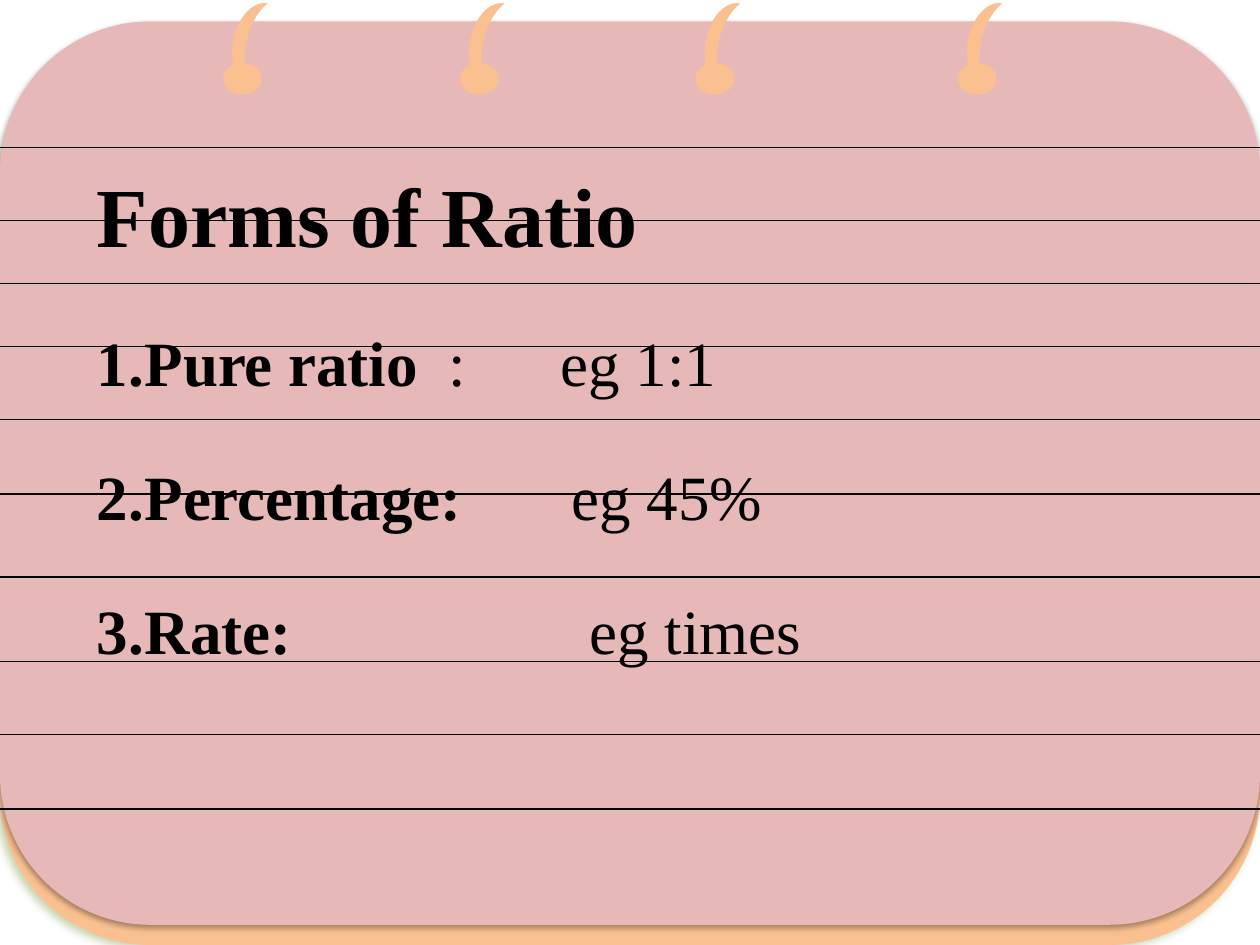
from lxml import etree
from pptx import Presentation
from pptx.dml.color import RGBColor
from pptx.enum.shapes import MSO_CONNECTOR, MSO_SHAPE
from pptx.enum.text import MSO_AUTO_SIZE, PP_ALIGN
from pptx.oxml.ns import qn
from pptx.util import Inches, Pt

COLORS = {"ring": "FAC090", "paper": "E6B9B8", "ink": "000000", "glow": "77933C"}
FONT = "Times New Roman"
RULE_TOPS = [1.17, 1.75, 2.25, 2.75, 3.33, 3.92, 4.58, 5.25, 5.83, 6.42]
RING_LEFTS = [1.77, 3.65, 5.52, 7.6]
FORMS = [
    ("Pure ratio", "\t:\teg 1:1", [2.79, 3.68]),
    ("Percentage:", "\teg 45%", [3.77]),
    ("Rate:", "\teg times", [3.91]),
]


class Notepad:
    """Draws the parts of a ruled notepad on the current slide."""

    def __init__(self, page):
        self.page = page
        self.group = page.shapes.add_group_shape()

    def color(self, name):
        return RGBColor.from_string(COLORS[name])

    def shape(self, kind, left, top, width, height, fill, rotation=0):
        shape = self.group.shapes.add_shape(
            kind, Inches(left), Inches(top), Inches(width), Inches(height))
        shape.shadow.inherit = False
        shape.fill.solid()
        shape.fill.fore_color.rgb = self.color(fill)
        shape.line.fill.background()
        shape.rotation = rotation
        return shape

    def sheet(self, top, fill, shadow, alpha, blur, distance, angle):
        sheet = self.shape(MSO_SHAPE.ROUNDED_RECTANGLE, 0, top, 10, 7.17, fill)
        effects = sheet._element.spPr.find(qn("a:effectLst"))
        outer = etree.SubElement(
            effects, qn("a:outerShdw"), blurRad=str(Pt(blur)), dist=str(Pt(distance)),
            dir=str(angle * 60000), rotWithShape="0")
        tint = etree.SubElement(outer, qn("a:srgbClr"), val=COLORS[shadow])
        etree.SubElement(tint, qn("a:alpha"), val=str(alpha * 1000))

    def ring(self, left):
        self.shape(MSO_SHAPE.MOON, left + 0.08, 0, 0.21, 0.67, "ring", 11.4)
        self.shape(MSO_SHAPE.OVAL, left, 0.5, 0.31, 0.25, "ring")

    def rule(self, top):
        rule = self.group.shapes.add_connector(
            MSO_CONNECTOR.STRAIGHT, 0, Inches(top), Inches(10), Inches(top))
        rule.line.color.rgb = self.color("ink")
        rule.line.width = Pt(0.75)
        etree.SubElement(rule._element.spPr, qn("a:effectLst"))

    def text_box(self, left, top, width, height):
        box = self.page.shapes.add_textbox(
            Inches(left), Inches(top), Inches(width), Inches(height))
        frame = box.text_frame
        frame.word_wrap = True
        frame.auto_size = MSO_AUTO_SIZE.NONE
        return frame

    def style(self, para, size):
        para.alignment = PP_ALIGN.JUSTIFY
        para.font.name = FONT
        para.font.size = Pt(size)
        para.font.color.rgb = self.color("ink")

    def title(self, frame, text):
        para = frame.paragraphs[0]
        para.text = text
        self.style(para, 48)
        para.font.bold = True

    def item(self, frame, name, example, stops):
        para = frame.add_paragraph()
        props = para._p.get_or_add_pPr()
        props.set("marL", str(Inches(0.38)))
        props.set("indent", str(-Inches(0.38)))
        etree.SubElement(props, qn("a:buFont"), typeface=FONT)
        etree.SubElement(props, qn("a:buAutoNum"), type="arabicPeriod")
        tabs = etree.SubElement(props, qn("a:tabLst"))
        for stop in stops:
            etree.SubElement(tabs, qn("a:tab"), pos=str(Inches(stop)), algn="l")
        self.style(para, 36)
        para.space_before = Pt(33.5)
        for text, bold in ((name, True), (example, False)):
            span = para.add_run()
            span.text = text
            span.font.bold = bold


def main():
    deck = Presentation()
    deck.slide_width, deck.slide_height = Inches(10), Inches(7.5)
    pad = Notepad(deck.slides.add_slide(deck.slide_layouts[6]))
    pad.sheet(0.33, "ring", "glow", 40, 4, 3, 135)
    pad.sheet(0.17, "paper", "ink", 35, 3.1, 1.8, 90)
    for left in RING_LEFTS:
        pad.ring(left)
    for top in RULE_TOPS:
        pad.rule(top)
    frame = pad.text_box(0.67, 1.25, 6.83, 4.14)
    pad.title(frame, "Forms of Ratio")
    for name, example, stops in FORMS:
        pad.item(frame, name, example, stops)
    deck.save("out.pptx")


if __name__ == "__main__":
    main()
